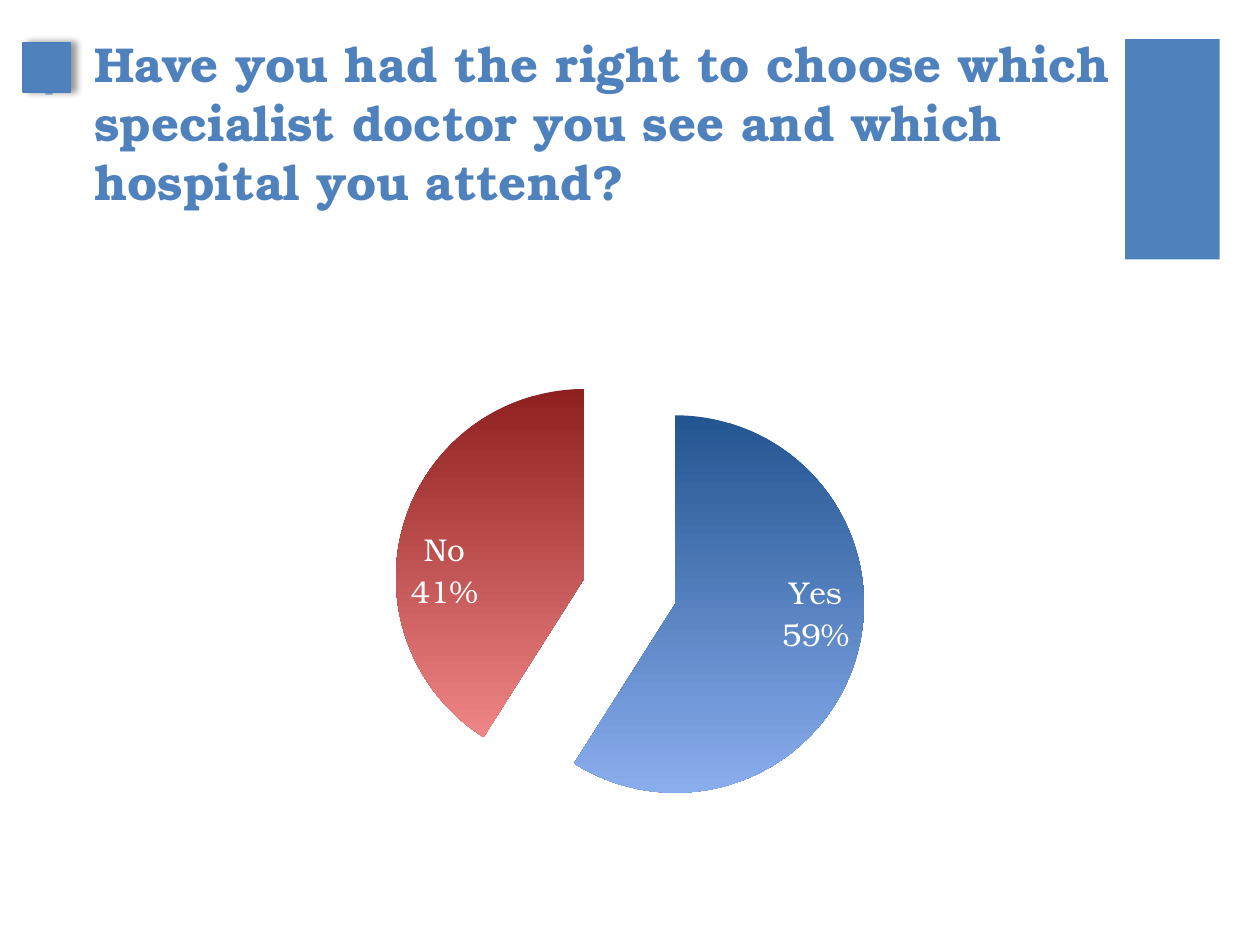
from lxml import etree
from pptx import Presentation
from pptx.chart.data import CategoryChartData
from pptx.dml.color import RGBColor
from pptx.enum.chart import XL_CHART_TYPE as ChartType, XL_LABEL_POSITION as LabelPosition
from pptx.enum.shapes import MSO_SHAPE as Shape
from pptx.enum.text import MSO_ANCHOR as Anchor
from pptx.oxml import parse_xml
from pptx.oxml.ns import nsdecls, qn
from pptx.util import Inches, Pt

FONT = "TeX Gyre Bonum"
BLUE = "4F81BD"
SLICE_GRADIENTS = [("235591", "8AADEE"), ("8F2020", "F08585")]


def color(value):
    return RGBColor.from_string(value)


def inches(box):
    return [Inches(length) for length in box]


def format_font(font, size, fill, bold=False):
    for name, value in {"name": FONT, "size": Pt(size), "bold": bold}.items():
        setattr(font, name, value)
    font.color.rgb = color(fill)


def add_text(slide, box, text, size, fill, inset=(0, 0)):
    frame = slide.shapes.add_textbox(*inches(box)).text_frame
    horizontal, vertical = inches(inset)
    settings = {
        "word_wrap": True,
        "vertical_anchor": Anchor.TOP,
        "margin_left": horizontal,
        "margin_right": horizontal,
        "margin_top": vertical,
        "margin_bottom": vertical,
    }
    for name, value in settings.items():
        setattr(frame, name, value)
    run = frame.paragraphs[0].add_run()
    run.text = text
    format_font(run.font, size, fill, bold=True)


def add_block(slide, box, line=None):
    block = slide.shapes.add_shape(Shape.RECTANGLE, *inches(box))
    block.shadow.inherit = False
    block.fill.solid()
    block.fill.fore_color.rgb = color(BLUE)
    if line:
        block.line.color.rgb = color(line)
        block.line.width = Pt(1)
    else:
        block.line.fill.background()
    return block


def add_drop_shadow(shape):
    effects = shape._element.spPr.find(qn("a:effectLst"))
    effects.append(parse_xml(
        f'<a:outerShdw {nsdecls("a")} blurRad="{Pt(4)}" dist="{Pt(3)}" dir="0" '
        'algn="l" rotWithShape="0"><a:srgbClr val="000000">'
        '<a:alpha val="40000"/></a:srgbClr></a:outerShdw>'))


def explode(series, percent):
    explosion = etree.Element(qn("c:explosion"), val=str(percent))
    series._element.get_or_add_spPr().addnext(explosion)


def add_answer_pie(slide, box):
    data = CategoryChartData()
    data.categories = ["Yes", "No"]
    data.add_series("Series 1", (59, 41))
    chart = slide.shapes.add_chart(ChartType.PIE, *inches(box), data).chart
    chart.has_title = False
    chart.has_legend = False
    format_font(chart.font, 18, "000000")

    plot = chart.plots[0]
    plot.vary_by_categories = True
    series = plot.series[0]
    explode(series, 25)
    for index, gradient in enumerate(SLICE_GRADIENTS):
        slice_format = series.points[index].format
        slice_format.line.fill.background()
        slice_format.fill.gradient()
        slice_format.fill.gradient_angle = 270
        for stop, shade in zip(slice_format.fill.gradient_stops, gradient):
            stop.color.rgb = color(shade)

    labels = series.data_labels
    settings = {
        "show_percentage": True,
        "show_category_name": True,
        "show_value": False,
        "position": LabelPosition.INSIDE_END,
    }
    for name, value in settings.items():
        setattr(labels, name, value)
    format_font(labels.font, 18, "FFFFFF")


def add_header(slide, left, top, width):
    """Place the question between its marker and the side block."""
    add_block(slide, (left + width - 0.75, top + 0.09, 0.75, 1.75))
    add_text(slide, (left + 0.06, top + 0.03, 0.29, 0.61), "+", 36, "95B3D7")
    add_text(slide, (left + 0.47, top, 8.26, 1.22),
             "Have you had the right to choose which specialist doctor "
             "you see and which hospital you attend?",
             28, BLUE, inset=(0.1, 0.05))


def main():
    presentation = Presentation()
    presentation.slide_width, presentation.slide_height = inches((10, 7.5))
    slide = presentation.slides.add_slide(presentation.slide_layouts[6])
    add_header(slide, 0.18, 0.22, 9.5)
    add_answer_pie(slide, (2.25, 2.68, 5.5, 4.02))
    add_drop_shadow(add_block(slide, (0.18, 0.34, 0.38, 0.39), line="4B7EBC"))
    presentation.save("out.pptx")


if __name__ == "__main__":
    main()
